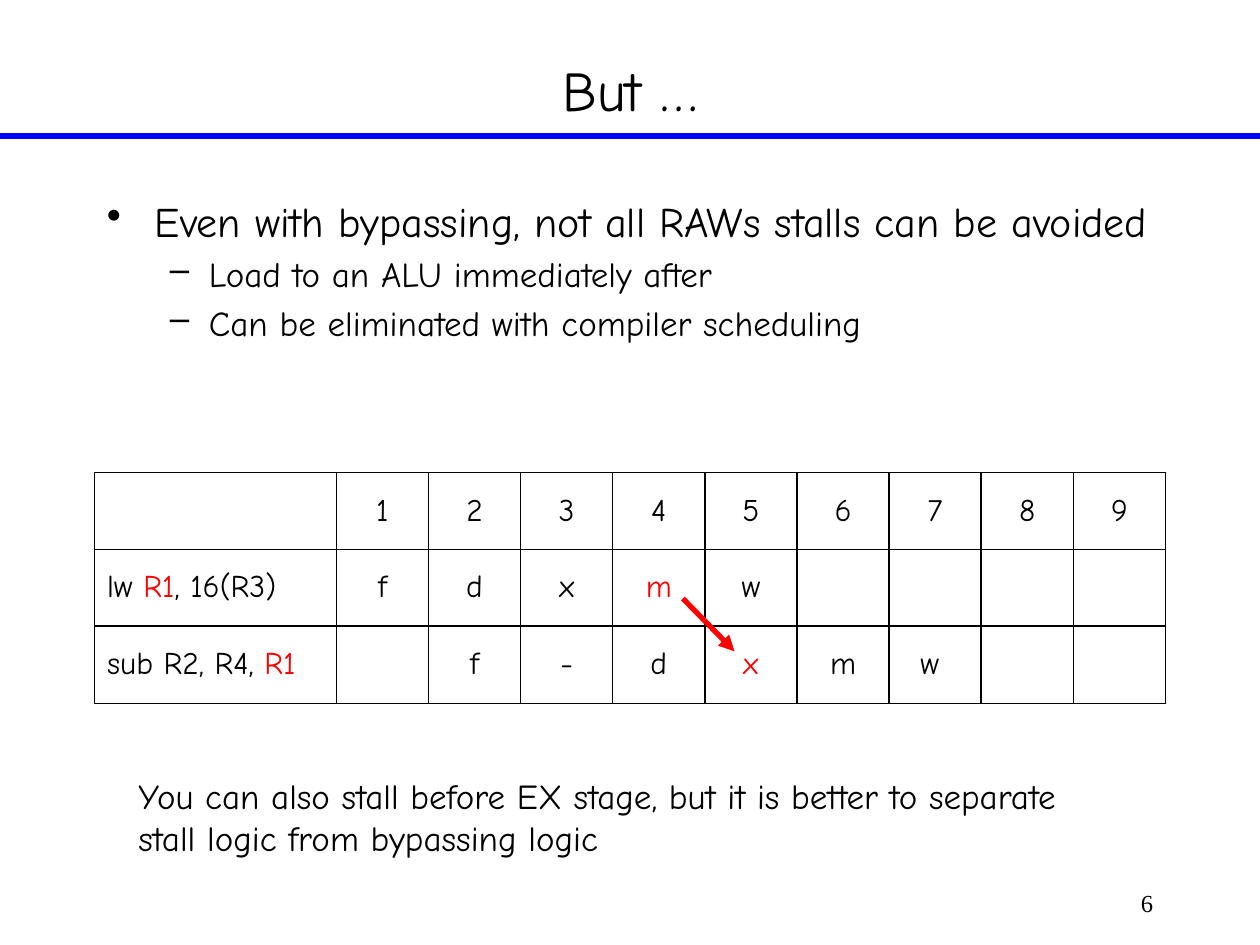
import pptx
import pptx.dml.color
import pptx.enum.shapes
import pptx.enum.text
import pptx.oxml
import pptx.util
from pptx.util import Inches

BLACK = pptx.dml.color.RGBColor(0x00, 0x00, 0x00)
RED = pptx.dml.color.RGBColor(0xFF, 0x00, 0x00)
BLUE = pptx.dml.color.RGBColor(0x00, 0x00, 0xFF)
FONT = "Comic Neue"
ALIGN = pptx.enum.text.PP_ALIGN
MIDDLE = pptx.enum.text.MSO_ANCHOR.MIDDLE
NS = 'xmlns:a="http://schemas.openxmlformats.org/drawingml/2006/main"'


def style_runs(paragraph, size, color=BLACK, font=FONT):
    for run in paragraph.runs:
        run.font.size = pptx.util.Pt(size)
        run.font.name = font
        run.font.color.rgb = color


def add_line(start, end, color):
    line = slide.shapes.add_connector(
        pptx.enum.shapes.MSO_CONNECTOR.STRAIGHT,
        Inches(start[0]), Inches(start[1]), Inches(end[0]), Inches(end[1]))
    line.line.color.rgb = color
    line.line.width = pptx.util.Pt(3)
    line._element.spPr.append(pptx.oxml.parse_xml(f"<a:effectLst {NS}/>"))
    return line


prs = pptx.Presentation()
prs.slide_width, prs.slide_height = Inches(10), Inches(7.5)
slide = prs.slides.add_slide(prs.slide_layouts[5])

# Title and the rule below it
title = slide.shapes.title
title.left, title.top = Inches(0.75), Inches(0.17)
title.width, title.height = Inches(8.5), Inches(1.08)
title.text_frame.text = "But …"
title.text_frame.vertical_anchor = MIDDLE
title.text_frame.paragraphs[0].alignment = ALIGN.CENTER
style_runs(title.text_frame.paragraphs[0], 32)
add_line((0, 1.08), (10, 1.08), BLUE)

# Bullets: text, level, size, left margin, hanging indent, bullet
bullets = [
    ("Even with bypassing, not all RAWs stalls can be avoided", 0, 24, 0.38, 0.38, "•"),
    ("Load to an ALU immediately after", 1, 20, 0.81, 0.31, "–"),
    ("Can be eliminated with compiler scheduling", 1, 20, 0.81, 0.31, "–"),
]
body = slide.shapes.add_textbox(
    Inches(0.75), Inches(1.5), Inches(8.5), Inches(2.67)).text_frame
body.word_wrap = True
for i, (text, level, size, margin, hang, mark) in enumerate(bullets):
    paragraph = body.add_paragraph() if i else body.paragraphs[0]
    paragraph.text = text
    paragraph.level = level
    paragraph.space_before = pptx.util.Pt(size * 0.2)
    style_runs(paragraph, size)
    props = paragraph._p.get_or_add_pPr()
    props.set("marL", str(Inches(margin)))
    props.set("indent", str(-Inches(hang)))
    props.append(pptx.oxml.parse_xml(f'<a:buChar {NS} char="{mark}"/>'))

# Pipeline table: each cell is a list of (text, colour) runs
stages = [
    [""] + [str(cycle) for cycle in range(1, 10)],
    [[("lw ", BLACK), ("R1", RED), (", 16(R3)", BLACK)],
     "f", "d", "x", [("m", RED)], "w", "", "", "", ""],
    [[("sub R2, R4, ", BLACK), ("R1", RED)],
     "", "f", "-", "d", [("x", RED)], "m", "w ", "", ""],
]
n_rows, n_cols = len(stages), len(stages[0])
pipeline = slide.shapes.add_table(
    n_rows, n_cols, Inches(0.75), Inches(3.75), Inches(8.5), Inches(1.83)).table
pipeline.first_row = pipeline.horz_banding = False
for c, column in enumerate(pipeline.columns):
    column.width = Inches((8.5 - 1.92) / 9 if c else 1.92)
for r, row in enumerate(stages):
    pipeline.rows[r].height = Inches(0.61)
    for c, content in enumerate(row):
        cell = pipeline.cell(r, c)
        cell.vertical_anchor = MIDDLE
        paragraph = cell.text_frame.paragraphs[0]
        paragraph.alignment = ALIGN.CENTER if c else ALIGN.LEFT
        runs = [(content, BLACK)] if isinstance(content, str) else content
        for text, color in runs:
            if text:
                run = paragraph.add_run()
                run.text = text
                run.font.size = pptx.util.Pt(18)
                run.font.name = FONT
                run.font.color.rgb = color
        # Thin outer frame, 1 pt inner lines
        outer = {"lnL": c == 0, "lnR": c == n_cols - 1,
                 "lnT": r == 0, "lnB": r == n_rows - 1}
        for side, is_outer in outer.items():
            width = pptx.util.Pt(0.25 if is_outer else 1)
            cell._tc.get_or_add_tcPr().append(pptx.oxml.parse_xml(
                f'<a:{side} {NS} w="{width}"><a:solidFill>'
                f'<a:srgbClr val="{BLACK}"/></a:solidFill></a:{side}>'))
        cell.fill.background()

# Bypass arrow from m to x
bypass = add_line((5.42, 4.75), (5.83, 5.17), RED)
bypass.line._get_or_add_ln().append(
    pptx.oxml.parse_xml(f'<a:tailEnd {NS} type="triangle"/>'))

# Closing remark
remark = slide.shapes.add_textbox(
    Inches(1), Inches(6.1), Inches(8.02), Inches(0.77)).text_frame
remark.word_wrap = True
remark.text = ("You can also stall before EX stage, but it is better to separate "
               "stall logic from bypassing logic")
style_runs(remark.paragraphs[0], 20)

# Slide number
number = slide.shapes.add_textbox(
    Inches(7.17), Inches(7), Inches(2.08), Inches(0.5)).text_frame
number.word_wrap = True
number.text = "6"
number.paragraphs[0].alignment = ALIGN.RIGHT
style_runs(number.paragraphs[0], 14, font="Times New Roman")

prs.save("out.pptx")
